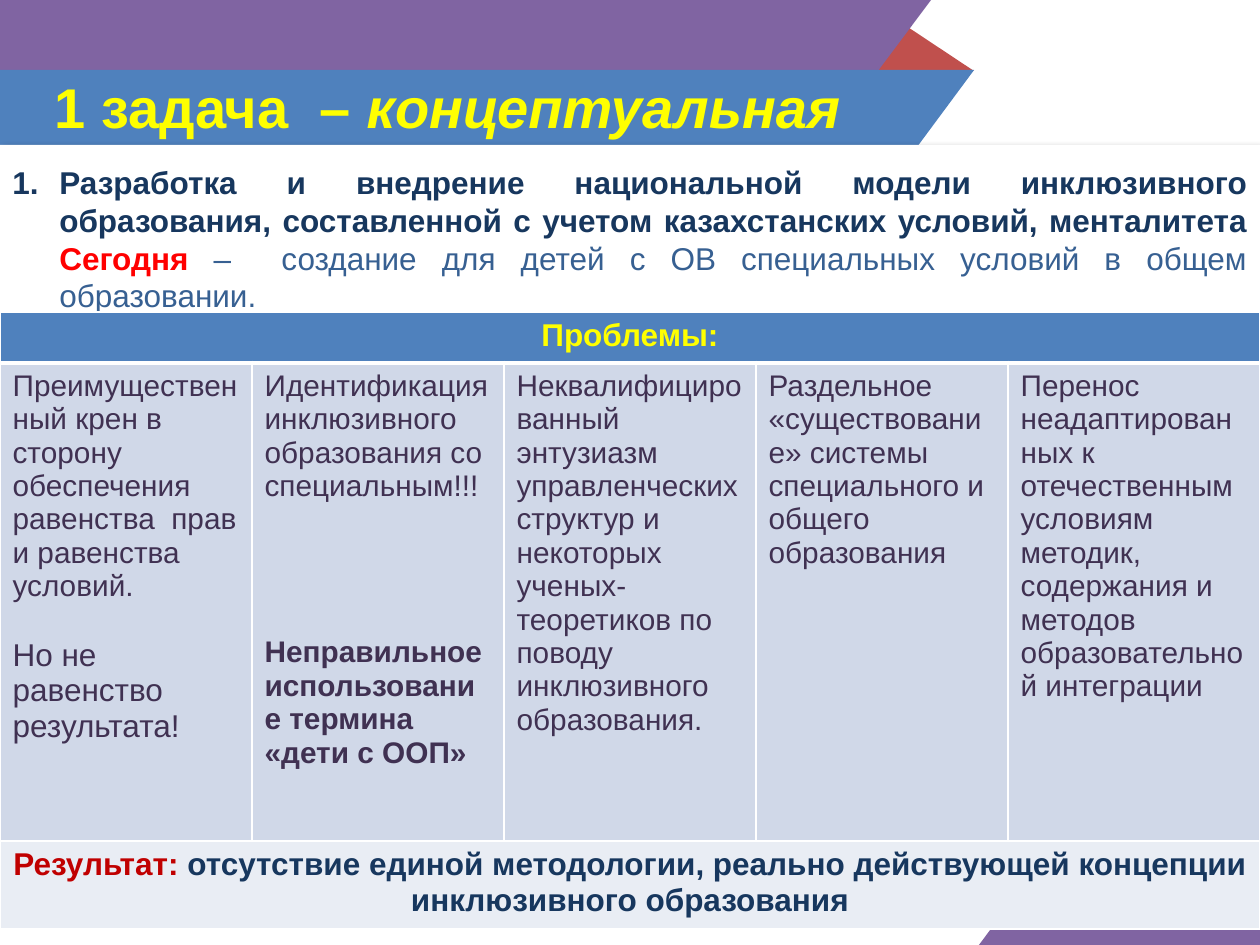
from lxml.etree import SubElement
from pptx import Presentation
from pptx.dml.color import RGBColor
from pptx.enum.shapes import MSO_SHAPE
from pptx.enum.text import MSO_ANCHOR, PP_ALIGN
from pptx.oxml.ns import qn
from pptx.util import Pt

HUES = {
    "purple": "8064A2", "red": "C0504D", "blue": "4F81BD", "white": "FFFFFF",
    "yellow": "FFFF00", "navy": "17375E", "alert": "FF0000", "steel": "376092",
    "plum": "403152", "dark": "C00000", "body": "D0D8E8", "pale": "E9EDF4",
}
RECT, WEDGE, PEAK = MSO_SHAPE.RECTANGLE, MSO_SHAPE.RIGHT_TRIANGLE, MSO_SHAPE.ISOSCELES_TRIANGLE
BANDS = [
    (RECT, (1071, 822, 189, 123), "purple", 0, False),
    (WEDGE, (979, 822, 92, 123), "purple", 0, True),
    (PEAK, (867, 23, 107, 48), "red", 0, False),
    (RECT, (0, 0, 748, 244), "purple", 0, False),
    (WEDGE, (748, 0, 183, 244), "purple", 180, True),
    (RECT, (0, 70, 868, 143), "blue", 0, False),
    (WEDGE, (868, 70, 106, 143), "blue", 180, True),
]

HEAD = {"size": 32, "bold": True, "hue": "yellow"}
LEAD = {"size": 18, "bold": True, "hue": "navy"}
CELL = {"size": 17, "bold": False, "hue": "plum"}
TITLE = [("1 задача  – ", HEAD), ("концептуальная", HEAD | {"italic": True})]
TASK = [
    ("Разработка и внедрение национальной модели инклюзивного образования, "
     "составленной с учетом казахстанских условий, менталитета ", LEAD),
    ("Сегодня ", LEAD | {"hue": "alert"}),
    ("–  создание для детей с ОВ специальных условий в общем образовании.",
     LEAD | {"hue": "steel", "bold": False}),
]
ISSUES = [
    [("Преимущественный крен в сторону обеспечения равенства  прав и равенства условий.", CELL, 0),
     ("Но не равенство результата!", CELL | {"size": 18}, 20)],
    [("Идентификация инклюзивного образования со специальным!!!", CELL, 0),
     ("Неправильное использование термина «дети с ООП»", CELL | {"bold": True}, 76)],
    [("Неквалифицированный энтузиазм управленческих структур и некоторых "
      "ученых-теоретиков по поводу инклюзивного образования.", CELL, 0)],
    [("Раздельное «существование» системы специального и общего образования", CELL, 0)],
    [("Перенос неадаптированных к отечественным условиям методик, содержания и "
      "методов образовательной интеграции", CELL, 0)],
]
TOPIC = [("Проблемы:", LEAD | {"hue": "yellow"})]
RESULT = [
    ("Результат: ", LEAD | {"hue": "dark"}),
    ("отсутствие единой методологии, реально действующей концепции инклюзивного образования", LEAD),
]
ROWS = [(51, "blue"), (478, "body"), (88, "pale")]
EDGES = [("lnL", (1, 1, 1)), ("lnR", (1, 1, 1)), ("lnT", (1, 3, 1)), ("lnB", (3, 1, 1))]


def px(n):
    return round(n * 914400 / 126)


def rgb(hue):
    return RGBColor.from_string(HUES[hue])


def put(par, runs, **form):
    for key, val in form.items():
        setattr(par, key, val)
    for text, look in runs:
        run = par.add_run()
        run.text = text
        font = run.font
        for key, val in ({"name": "Arial"} | look).items():
            if key == "hue":
                font.color.rgb = rgb(val)
            else:
                setattr(font, key, Pt(val) if key == "size" else val)


def block(slide, kind, box, hue):
    shape = slide.shapes.add_shape(kind, *map(px, box))
    shape.shadow.inherit = False
    shape.fill.solid()
    shape.fill.fore_color.rgb = rgb(hue)
    shape.line.fill.background()
    return shape


def node(root, tag, **vals):
    return SubElement(root, qn("a:" + tag), vals)


def bands(slide):
    for kind, box, hue, turn, flip in BANDS:
        shape = block(slide, kind, box, hue)
        shape.rotation = turn
        if kind == PEAK:
            shape.adjustments[0] = 0.324
        if flip:
            shape.element.spPr.get_or_add_xfrm().set("flipH", "1")


def title(slide):
    frame = slide.shapes.add_textbox(*map(px, (-15, 65, 912, 106))).text_frame
    form = {"word_wrap": True, "vertical_anchor": MSO_ANCHOR.MIDDLE, "margin_left": px(26),
            "margin_right": px(13), "margin_top": px(13), "margin_bottom": px(29)}
    for key, val in form.items():
        setattr(frame, key, val)
    put(frame.paragraphs[0], TITLE, alignment=PP_ALIGN.CENTER, line_spacing=0.9)


def task(slide):
    shape = block(slide, RECT, (0, 145, 1260, 326), "white")
    glow = node(shape.element.spPr.find(qn("a:effectLst")), "outerShdw", blurRad=str(Pt(4)),
                dist=str(Pt(3)), dir="2700000", algn="tl", rotWithShape="0")
    node(node(glow, "srgbClr", val="000000"), "alpha", val="40000")
    frame = shape.text_frame
    form = {"word_wrap": True, "vertical_anchor": MSO_ANCHOR.TOP, "margin_top": px(18)}
    for key, val in form.items():
        setattr(frame, key, val)
    par = frame.paragraphs[0]
    put(par, TASK, alignment=PP_ALIGN.JUSTIFY, line_spacing=1.0)
    props = par._p.get_or_add_pPr()
    props.set("marL", str(px(47)))
    props.set("indent", str(-px(47)))
    node(props, "buFont", typeface="+mj-lt")
    node(props, "buAutoNum", type="arabicPeriod")


def dress(cell, row, hue):
    props = cell._tc.get_or_add_tcPr()
    for tag, sizes in EDGES:
        line = node(props, tag, w=str(Pt(sizes[row])))
        node(node(line, "solidFill"), "srgbClr", val=HUES["white"])
    cell.fill.solid()
    cell.fill.fore_color.rgb = rgb(hue)


def table(slide):
    high = sum(size for size, _ in ROWS)
    grid = slide.shapes.add_table(len(ROWS), len(ISSUES), *map(px, (0, 312, 1260, high))).table
    for row, (size, hue) in enumerate(ROWS):
        grid.rows[row].height = px(size)
        for col in range(len(ISSUES)):
            dress(grid.cell(row, col), row, hue)
    for row, runs in ((0, TOPIC), (2, RESULT)):
        cell = grid.cell(row, 0)
        cell.merge(grid.cell(row, len(ISSUES) - 1))
        put(cell.text_frame.paragraphs[0], runs, alignment=PP_ALIGN.CENTER)
    for col, parts in enumerate(ISSUES):
        frame = grid.cell(1, col).text_frame
        for nth, (text, look, gap) in enumerate(parts):
            par = frame.add_paragraph() if nth else frame.paragraphs[0]
            put(par, [(text, look)], space_before=Pt(gap))


def main():
    deck = Presentation()
    deck.slide_width, deck.slide_height = px(1260), px(945)
    slide = deck.slides.add_slide(deck.slide_layouts[6])
    bands(slide)
    title(slide)
    task(slide)
    table(slide)
    deck.save("out.pptx")


if __name__ == "__main__":
    main()
